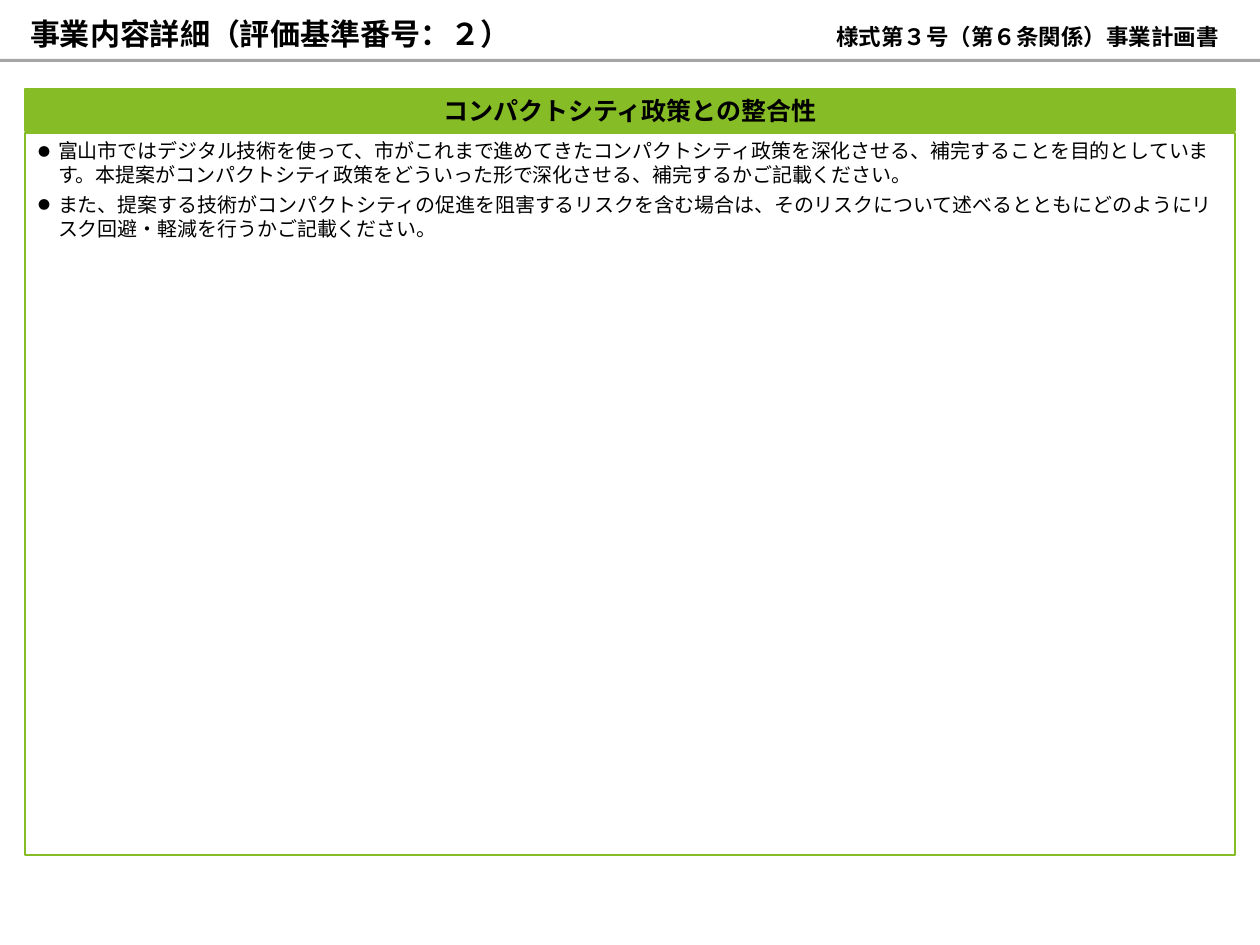
from dataclasses import dataclass

from lxml.etree import SubElement
from pptx import Presentation
from pptx.dml.color import RGBColor
from pptx.enum.shapes import MSO_SHAPE
from pptx.enum.text import MSO_ANCHOR, PP_ALIGN
from pptx.oxml.ns import qn
from pptx.util import Pt

PX = 10160  # EMU per px, 90 px to the inch


@dataclass(frozen=True)
class Theme:
    font: str = "Noto Sans CJK JP"
    text: str = "000000"
    green: str = "86BC25"
    rule: str = "A5A5A5"
    paper: str = "FFFFFF"
    title_size: int = 24
    heading_size: int = 20
    form_size: int = 18
    body_size: int = 16
    body_leading: float = 19.2
    body_gap: float = 4.3
    border: float = 1.5


THEME = Theme()


def add_bullet(paragraph, indent):
    properties = paragraph._p.get_or_add_pPr()
    properties.set("marL", str(indent * PX))
    properties.set("indent", str(-indent * PX))
    SubElement(properties, qn("a:buSzPct"), val="60000")
    SubElement(properties, qn("a:buFont"), typeface=THEME.font)
    SubElement(properties, qn("a:buChar"), char="●")


def write_text(shape, *texts, size, bold=False, align=PP_ALIGN.LEFT,
               anchor=MSO_ANCHOR.TOP, insets=(0, 0), wrap=True,
               bullet_indent=0, leading=None, gap=0):
    """Fill a shape with one paragraph per text; insets are (sides, top and bottom)."""
    frame = shape.text_frame
    frame.word_wrap = wrap
    frame.vertical_anchor = anchor
    frame.margin_left = frame.margin_right = insets[0] * PX
    frame.margin_top = frame.margin_bottom = insets[1] * PX
    for index, text in enumerate(texts):
        paragraph = frame.add_paragraph() if index else frame.paragraphs[0]
        paragraph.alignment = align
        if leading:
            paragraph.line_spacing = Pt(leading)
        paragraph.space_before = Pt(gap if index else 0)
        if bullet_indent:
            add_bullet(paragraph, bullet_indent)
        run = paragraph.add_run()
        run.text = text
        run.font.size = Pt(size)
        run.font.bold = bold
        run.font.name = THEME.font
        run.font.color.rgb = RGBColor.from_string(THEME.text)
        SubElement(run._r.get_or_add_rPr(), qn("a:ea"), typeface=THEME.font)


def add_text_box(slide, box, text, **text_format):
    shape = slide.shapes.add_textbox(*(length * PX for length in box))
    write_text(shape, text, **text_format)


def add_rectangle(slide, box, fill, line=None):
    shape = slide.shapes.add_shape(MSO_SHAPE.RECTANGLE, *(length * PX for length in box))
    shape.shadow.inherit = False
    shape.fill.solid()
    shape.fill.fore_color.rgb = RGBColor.from_string(fill)
    if line:
        shape.line.color.rgb = RGBColor.from_string(line)
        shape.line.width = Pt(THEME.border)
    else:
        shape.line.fill.background()
    return shape


def add_page_header(slide, box, title, form_name):
    left, top, width, height = box
    rule_height = 3
    add_text_box(slide, (left + 30, top + 19, 618, 33), title,
                 size=THEME.title_size, bold=True, anchor=MSO_ANCHOR.BOTTOM)
    add_rectangle(slide, (left, top + height - rule_height, width, rule_height), THEME.rule)
    add_text_box(slide, (left + width - 440, top + 28, 415, 22), form_name,
                 size=THEME.form_size, bold=True, align=PP_ALIGN.CENTER,
                 anchor=MSO_ANCHOR.BOTTOM)


def add_answer_panel(slide, box, heading, instructions):
    left, top, width, height = box
    heading_height, body_offset = 42, 44
    insets = (13, 6)
    heading_bar = add_rectangle(slide, (left, top, width, heading_height),
                                THEME.green, THEME.green)
    write_text(heading_bar, heading, size=THEME.heading_size, bold=True,
               align=PP_ALIGN.CENTER, anchor=MSO_ANCHOR.MIDDLE, insets=insets, wrap=False)
    body = add_rectangle(slide, (left, top + body_offset, width, height - body_offset),
                         THEME.paper, THEME.green)
    write_text(body, *instructions, size=THEME.body_size, insets=insets, bullet_indent=20,
               leading=THEME.body_leading, gap=THEME.body_gap)


def main():
    presentation = Presentation()
    presentation.slide_width = 1260 * PX
    presentation.slide_height = 945 * PX
    slide = presentation.slides.add_slide(presentation.slide_layouts[6])
    add_page_header(slide, (0, 0, 1260, 62), "事業内容詳細（評価基準番号：２）",
                    "様式第３号（第６条関係）事業計画書")
    add_answer_panel(slide, (25, 89, 1210, 766), "コンパクトシティ政策との整合性", [
        "富山市ではデジタル技術を使って、市がこれまで進めてきたコンパクトシティ政策を深化させる、"
        "補完することを目的としています。本提案がコンパクトシティ政策をどういった形で深化させる、"
        "補完するかご記載ください。",
        "また、提案する技術がコンパクトシティの促進を阻害するリスクを含む場合は、"
        "そのリスクについて述べるとともにどのようにリスク回避・軽減を行うかご記載ください。",
    ])
    presentation.save("out.pptx")


if __name__ == "__main__":
    main()
